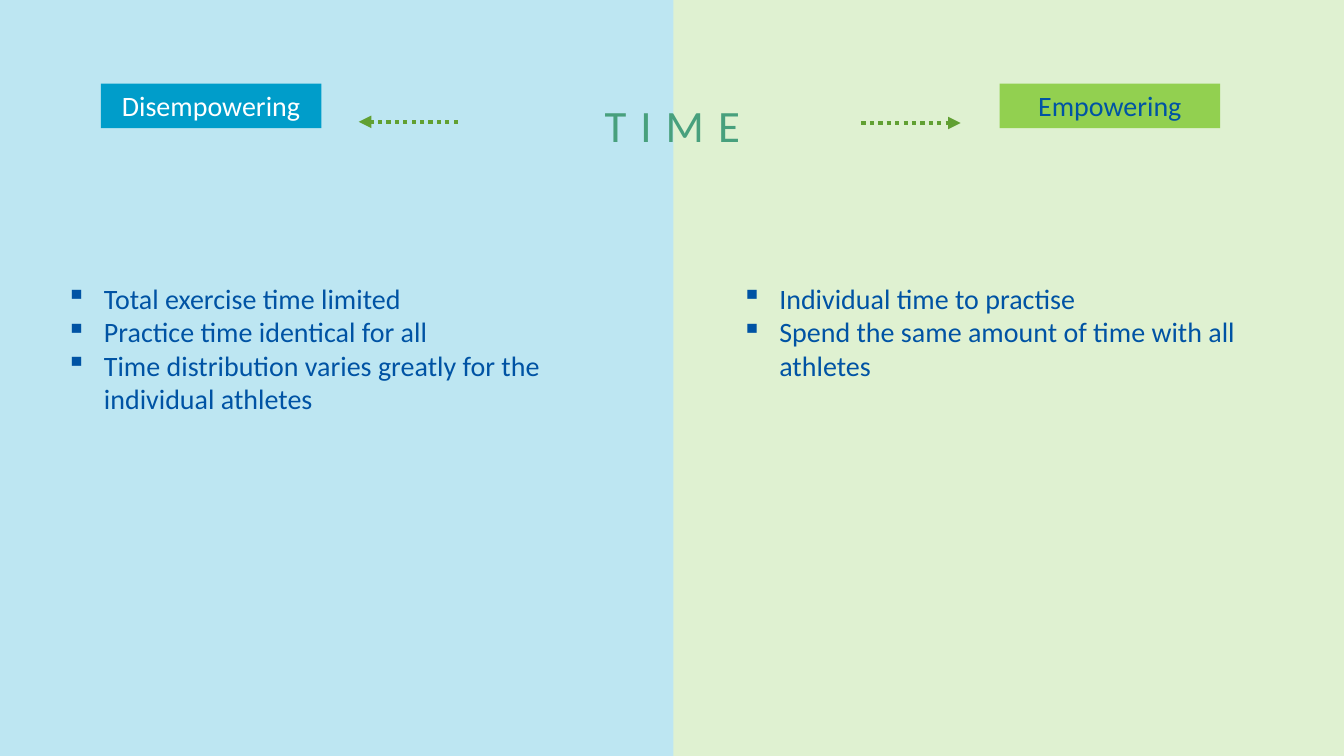
from dataclasses import dataclass

import lxml.etree
import pptx
import pptx.dml.color
import pptx.enum.dml
import pptx.enum.shapes
import pptx.enum.text
import pptx.oxml.ns
import pptx.util
from pptx.util import Cm

COLORS = {
    "sky": "BDE6F2", "mint": "DFF1D1", "blue": "009DCA", "lime": "92D050",
    "navy": "0053A4", "white": "FFFFFF", "arrow": "61A032", "title": "48A07D",
}
FONT = "Calibri"
SLIDE_W, SLIDE_H = 33.87, 19.05
PANEL_W = 16.97
LABEL_TOP, LABEL_W, LABEL_H = 2.11, 5.56, 1.12
LIST_TOP, INDENT = 6.96, 0.95


@dataclass
class Side:
    """One half of the comparison, with lengths in centimetres."""
    panel_x: float
    panel_color: str
    label: str
    label_x: float
    label_color: str
    label_text_color: str
    arrow_from: float
    arrow_to: float
    arrow_y: float
    list_x: float
    list_w: float
    list_h: float
    points: list[str]


SIDES = [
    Side(SLIDE_W - PANEL_W, "mint", "Empowering", 25.19, "lime", "navy",
         21.71, 24.21, 3.1, 18.44, 14.22, 2.82,
         ["Individual time to practise",
          "Spend the same amount of time with all athletes"]),
    Side(0, "sky", "Disempowering", 2.54, "blue", "white",
         11.54, 9.04, 3.07, 1.42, 14.02, 3.68,
         ["Total exercise time limited",
          "Practice time identical for all",
          "Time distribution varies greatly for the individual athletes"]),
]


def rgb(name: str) -> pptx.dml.color.RGBColor:
    """Return a named colour."""
    return pptx.dml.color.RGBColor.from_string(COLORS[name])


def add_xml(parent, tag: str, **attrs: str):
    """Append a DrawingML element and return it."""
    return lxml.etree.SubElement(parent, pptx.oxml.ns.qn(tag), attrs)


def write(tf, paragraphs: list[str], *, color: str, size: float = 20,
          align: str = "LEFT", anchor: str = "TOP", fit: str = "SHAPE_TO_FIT_TEXT",
          spacing: float = 1.0, bullet: str = "") -> None:
    """Fill a text frame with uniformly formatted paragraphs."""
    tf.word_wrap = True
    tf.auto_size = pptx.enum.text.MSO_AUTO_SIZE[fit]
    tf.vertical_anchor = pptx.enum.text.MSO_ANCHOR[anchor]
    for i, text in enumerate(paragraphs):
        p = tf.add_paragraph() if i else tf.paragraphs[0]
        p.alignment = pptx.enum.text.PP_ALIGN[align]
        p.line_spacing = spacing
        p.space_before = pptx.util.Pt(0)
        if bullet:
            pPr = p._p.get_or_add_pPr()
            pPr.set("marL", str(Cm(INDENT)))
            pPr.set("indent", str(-Cm(INDENT)))
            add_xml(pPr, "a:buChar", char=bullet)
        r = p.add_run()
        r.text = text
        r.font.name = FONT
        r.font.size = pptx.util.Pt(size)
        r.font.color.rgb = rgb(color)


def add_rect(s, x: float, y: float, w: float, h: float, color: str):
    """Draw a plain filled rectangle."""
    sp = s.shapes.add_shape(pptx.enum.shapes.MSO_SHAPE.RECTANGLE,
                            Cm(x), Cm(y), Cm(w), Cm(h))
    sp.shadow.inherit = False
    sp.fill.solid()
    sp.fill.fore_color.rgb = rgb(color)
    sp.line.fill.background()
    return sp


def add_arrow(s, x1: float, x2: float, y: float) -> None:
    """Draw a dotted horizontal arrow."""
    cx = s.shapes.add_connector(pptx.enum.shapes.MSO_CONNECTOR.STRAIGHT,
                                Cm(x1), Cm(y), Cm(x2), Cm(y))
    cx.line.color.rgb = rgb("arrow")
    cx.line.width = pptx.util.Pt(3)
    cx.line.dash_style = pptx.enum.dml.MSO_LINE.ROUND_DOT
    add_xml(cx.line._get_or_add_ln(), "a:tailEnd", type="triangle")
    add_xml(cx._element.spPr, "a:effectLst")


def add_title(s, text: str) -> None:
    """Place the letter-spaced title above the panels."""
    sp = s.shapes.title
    sp.left, sp.top, sp.width, sp.height = Cm(8.69), Cm(1.52), Cm(16.51), Cm(2.97)
    write(sp.text_frame, [text], color="title", size=32, align="CENTER",
          anchor="MIDDLE", fit="NONE", spacing=1.2)
    rPr = sp.text_frame.paragraphs[0].runs[0].font._element
    rPr.set("spc", "1000")
    ln = add_xml(rPr, "a:ln", w=str(pptx.util.Pt(0.75)))
    add_xml(add_xml(ln, "a:solidFill"), "a:srgbClr", val=COLORS["title"])
    rPr.insert(0, ln)
    s.shapes._spTree.append(sp._element)


def add_side(s, side: Side) -> None:
    """Draw the label, arrow and list of one side."""
    sp = add_rect(s, side.label_x, LABEL_TOP, LABEL_W, LABEL_H, side.label_color)
    write(sp.text_frame, [side.label], color=side.label_text_color, align="CENTER")
    add_arrow(s, side.arrow_from, side.arrow_to, side.arrow_y)
    box = s.shapes.add_textbox(Cm(side.list_x), Cm(LIST_TOP),
                               Cm(side.list_w), Cm(side.list_h))
    write(box.text_frame, side.points, color="navy", bullet="▪")


def main() -> None:
    """Build and save the slide."""
    prs = pptx.Presentation()
    prs.slide_width, prs.slide_height = Cm(SLIDE_W), Cm(SLIDE_H)
    s = prs.slides.add_slide(prs.slide_layouts.get_by_name("Title Only"))
    for side in SIDES:
        add_rect(s, side.panel_x, 0, PANEL_W, SLIDE_H, side.panel_color)
    add_title(s, "TIME")
    for side in SIDES:
        add_side(s, side)
    prs.save("out.pptx")


if __name__ == "__main__":
    main()
